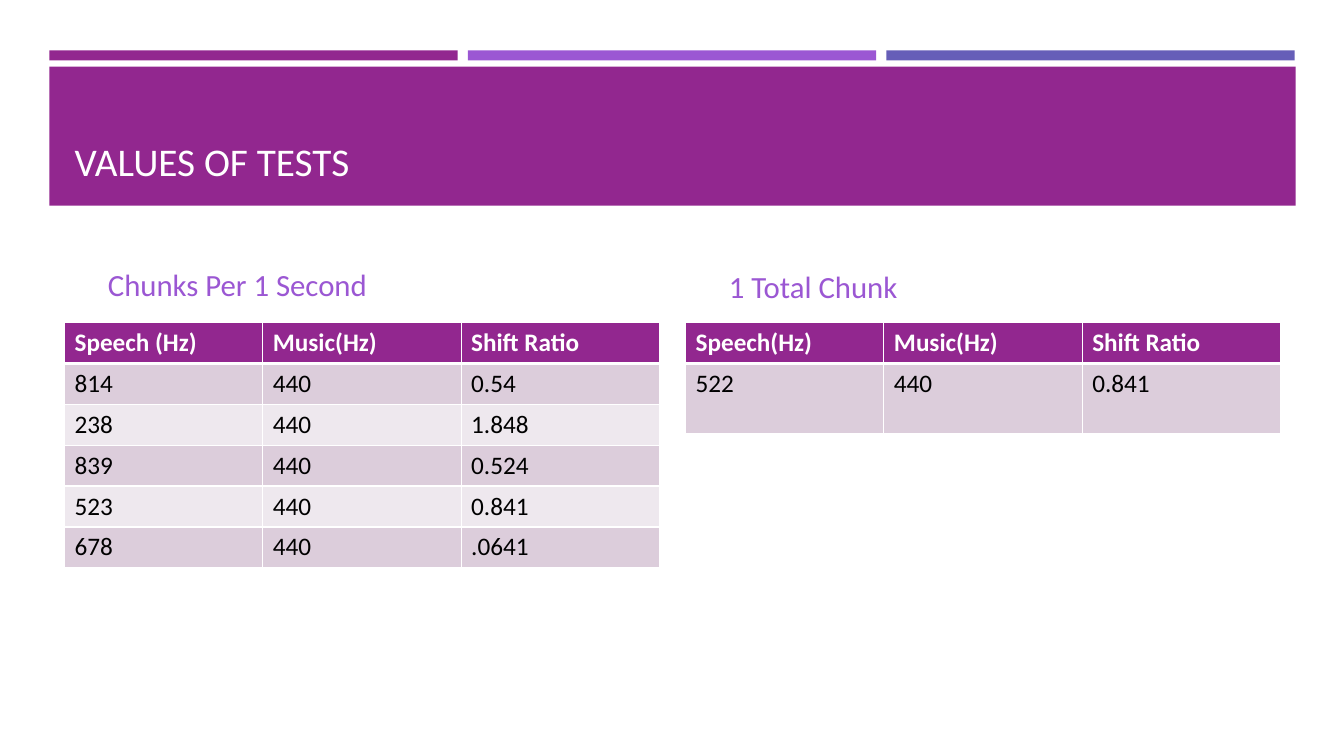
"""Build the slide that compares pitch test values in two tables."""
from dataclasses import dataclass

from lxml.etree import SubElement
from pptx import Presentation
from pptx.dml.color import RGBColor as Rgb
from pptx.enum.shapes import MSO_SHAPE as Preset
from pptx.enum.text import MSO_ANCHOR as Anchor, MSO_AUTO_SIZE as AutoSize, PP_ALIGN as Align
from pptx.oxml.ns import qn
from pptx.shapes.placeholder import SlidePlaceholder
from pptx.slide import Slide
from pptx.table import _Cell as Cell
from pptx.text.text import _Paragraph as Paragraph
from pptx.util import Inches, Pt


@dataclass(frozen=True)
class Theme:
    """Colours, font and type sizes."""
    font: str = "Calibri"
    plum: str = "92278F"
    violet: str = "9B57D3"
    indigo: str = "665EB8"
    white: str = "FFFFFF"
    black: str = "000000"
    dark_band: str = "DCCDDB"
    light_band: str = "EEE8EE"
    title_size: int = 28
    heading_size: int = 22
    cell_size: int = 18
    rule: float = 1
    header_rule: float = 3


@dataclass(frozen=True)
class Box:
    """A rectangle in inches."""
    left: float
    top: float
    width: float
    height: float

    def lengths(self) -> tuple[Inches, ...]:
        """Return left, top, width and height as lengths."""
        return tuple(Inches(n) for n in (self.left, self.top, self.width, self.height))


@dataclass(frozen=True)
class Band:
    """A filled bar of the slide's frame."""
    box: Box
    color: str


@dataclass(frozen=True)
class TestPanel:
    """A heading and the table of test values below it."""
    placeholder: int
    heading: str
    heading_box: Box
    left: float
    row_height: float
    rows: tuple[tuple[str, ...], ...]


THEME = Theme()
TABLE_TOP, TABLE_WIDTH, HEADER_HEIGHT = 3.2, 5.9, 0.405
STRIPE_LEFT, STRIPE_WIDTH, STRIPE_STEP = 0.49, 4.05, 4.15

BANDS = [
    Band(Box(STRIPE_LEFT + i * STRIPE_STEP, 0.5, STRIPE_WIDTH, 0.1), color)
    for i, color in enumerate((THEME.plum, THEME.violet, THEME.indigo))
] + [Band(Box(STRIPE_LEFT, 0.66, 12.36, 1.38), THEME.plum)]

PANELS = (
    TestPanel(1, "Chunks Per 1 Second", Box(0.97, 2.46, 5.56, 0.59), 0.64, HEADER_HEIGHT, (
        ("Speech (Hz)", "Music(Hz)", "Shift Ratio"),
        ("814", "440", "0.54"),
        ("238", "440", "1.848"),
        ("839", "440", "0.524"),
        ("523", "440", "0.841"),
        ("678", "440", ".0641"),
    )),
    TestPanel(3, "1 Total Chunk", Box(7.13, 2.46, 5.56, 0.61), 6.8, 0.7, (
        ("Speech(Hz)", "Music(Hz)", "Shift Ratio"),
        ("522", "440", "0.841"),
    )),
)


def add_run(paragraph: Paragraph, text: str, size: int, color: str, bold: bool = False) -> None:
    """Add one formatted run."""
    run = paragraph.add_run()
    run.text = text
    run.font.name = THEME.font
    run.font.size = Pt(size)
    run.font.bold = bold
    run.font.color.rgb = Rgb.from_string(color)


def fill_placeholder(holder: SlidePlaceholder, box: Box, text: str, size: int, color: str) -> Paragraph:
    """Move a placeholder, write its text and return the paragraph."""
    holder.left, holder.top, holder.width, holder.height = box.lengths()
    frame = holder.text_frame
    frame.word_wrap = True
    frame.auto_size = AutoSize.NONE
    frame.vertical_anchor = Anchor.BOTTOM
    paragraph = frame.paragraphs[0]
    paragraph.alignment = Align.LEFT
    add_run(paragraph, text, size, color)
    return paragraph


def draw_band(slide: Slide, band: Band) -> None:
    """Draw a bar behind the title."""
    bar = slide.shapes.add_shape(Preset.RECTANGLE, *band.box.lengths())
    bar.shadow.inherit = False
    bar.fill.solid()
    bar.fill.fore_color.rgb = Rgb.from_string(band.color)
    bar.line.fill.background()
    slide.shapes.title.element.addprevious(bar.element)


def rule_cell(cell: Cell, row: int) -> None:
    """Draw white rules round a cell, heavier between header and values."""
    properties = cell._tc.get_or_add_tcPr()
    heavy_side = {0: "lnB", 1: "lnT"}.get(row)
    for side in ("lnL", "lnR", "lnT", "lnB"):
        points = THEME.header_rule if side == heavy_side else THEME.rule
        line = SubElement(properties, qn(f"a:{side}"), w=str(Pt(points)))
        SubElement(SubElement(line, qn("a:solidFill")), qn("a:srgbClr"), val=THEME.white)


def draw_cell(cell: Cell, text: str, row: int) -> None:
    """Format and write one cell."""
    rule_cell(cell, row)
    header = row == 0
    band = THEME.dark_band if row % 2 else THEME.light_band
    cell.fill.solid()
    cell.fill.fore_color.rgb = Rgb.from_string(THEME.plum if header else band)
    color = THEME.white if header else THEME.black
    add_run(cell.text_frame.paragraphs[0], text, THEME.cell_size, color, bold=header)


def draw_panel(slide: Slide, panel: TestPanel) -> None:
    """Write a panel's heading and draw its table."""
    holder = next(p for p in slide.placeholders if p.placeholder_format.idx == panel.placeholder)
    heading = fill_placeholder(holder, panel.heading_box, panel.heading, THEME.heading_size, THEME.violet)
    heading.space_after = Pt(6)
    height = HEADER_HEIGHT + panel.row_height * (len(panel.rows) - 1)
    box = Box(panel.left, TABLE_TOP, TABLE_WIDTH, height)
    table = slide.shapes.add_table(len(panel.rows), len(panel.rows[0]), *box.lengths()).table
    for r, values in enumerate(panel.rows):
        table.rows[r].height = Inches(panel.row_height if r else HEADER_HEIGHT)
        for c, value in enumerate(values):
            draw_cell(table.cell(r, c), value, r)


def main() -> None:
    """Build and save the presentation."""
    deck = Presentation()
    deck.slide_width, deck.slide_height = Inches(13.33), Inches(7.5)
    slide = deck.slides.add_slide(deck.slide_layouts.get_by_name("Comparison"))
    for band in BANDS:
        draw_band(slide, band)
    title_box = Box(0.64, 0.8, 12.06, 1.08)
    fill_placeholder(slide.shapes.title, title_box, "VALUES OF TESTS", THEME.title_size, THEME.white)
    for panel in PANELS:
        draw_panel(slide, panel)
    for holder in list(slide.placeholders):
        if holder.has_text_frame and not holder.text_frame.text:
            holder.element.getparent().remove(holder.element)
    deck.save("out.pptx")


if __name__ == "__main__":
    main()
